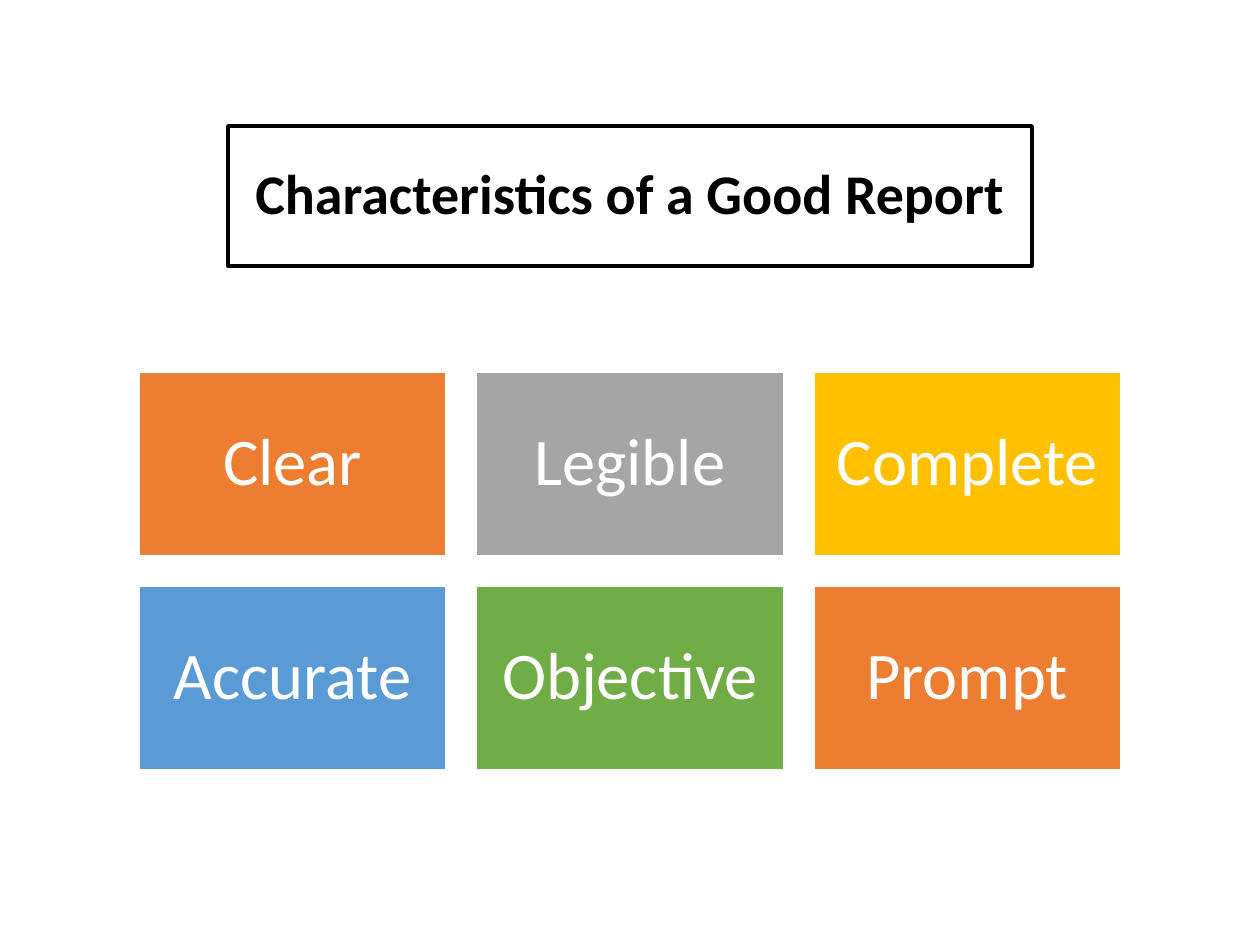
from dataclasses import dataclass

from lxml import etree
from pptx import Presentation
from pptx.dml.color import RGBColor
from pptx.enum.shapes import MSO_SHAPE
from pptx.enum.text import MSO_ANCHOR, MSO_AUTO_SIZE, PP_ALIGN
from pptx.oxml.ns import qn
from pptx.util import Pt

RECT = MSO_SHAPE.RECTANGLE
MIDDLE = MSO_ANCHOR.MIDDLE
CENTER = PP_ALIGN.CENTER
NO_FIT = MSO_AUTO_SIZE.NONE
PX = 914400 / 126


@dataclass(frozen=True)
class Theme:
    """Colours, font and type sizes of the deck."""
    font: str = "Calibri"
    ink: str = "000000"
    paper: str = "FFFFFF"
    orange: str = "ED7D31"
    grey: str = "A5A5A5"
    gold: str = "FFC000"
    blue: str = "5B9BD5"
    green: str = "70AD47"
    head: int = 32
    label: int = 38


THEME = Theme()
TRAITS = [
    ("Clear", THEME.orange), ("Legible", THEME.grey), ("Complete", THEME.gold),
    ("Accurate", THEME.blue), ("Objective", THEME.green), ("Prompt", THEME.orange),
]


def emu(px):
    """Turn px into EMU."""
    return round(px * PX)


def apply(item, values):
    """Set each attribute of item from a dict."""
    for name, value in values.items():
        setattr(item, name, value)


def paint(shape, fill, line, width):
    """Give a shape a solid fill and a line."""
    shape.fill.solid()
    shape.fill.fore_color.rgb = RGBColor.from_string(fill)
    shape.line.color.rgb = RGBColor.from_string(line)
    shape.line.width = Pt(width)


def write(shape, text, color, size, bold=False):
    """Write one centred paragraph in a shape."""
    frame = shape.text_frame
    frame.text = text
    para = frame.paragraphs[0]
    apply(frame, {"word_wrap": True, "vertical_anchor": MIDDLE, "auto_size": NO_FIT})
    apply(para, {"alignment": CENTER, "line_spacing": 0.9})
    font = para.runs[0].font
    apply(font, {"name": THEME.font, "size": Pt(size), "bold": bold})
    font.color.rgb = RGBColor.from_string(color)


def add_head(slide, box, text):
    """Place the framed title in its box."""
    title = slide.shapes.title
    apply(title, dict(zip(("left", "top", "width", "height"), map(emu, box))))
    paint(title, THEME.paper, THEME.ink, 2)
    tint = title.fill._xPr.find(qn("a:solidFill"))[0]
    etree.SubElement(tint, qn("a:alpha")).set("val", "10000")
    write(title, text, THEME.ink, THEME.head, True)


def add_grid(slide, box, traits, cols=3, gap=30, inset=20):
    """Fill the box with an even grid of coloured tiles."""
    left, top, width, height = box
    rows = -(-len(traits) // cols)
    wide = (width - gap * (cols - 1)) / cols
    high = (height - gap * (rows - 1)) / rows
    sides = ("margin_left", "margin_top", "margin_right", "margin_bottom")
    for index, (text, color) in enumerate(traits):
        row, col = divmod(index, cols)
        place = (left + col * (wide + gap), top + row * (high + gap), wide, high)
        tile = slide.shapes.add_shape(RECT, *map(emu, place))
        tile.shadow.inherit = False
        paint(tile, color, THEME.paper, 1)
        write(tile, text, THEME.paper, THEME.label)
        apply(tile.text_frame, dict.fromkeys(sides, emu(inset)))


def main():
    """Build and save the slide."""
    deck = Presentation()
    apply(deck, {"slide_width": emu(1260), "slide_height": emu(945)})
    slide = deck.slides.add_slide(deck.slide_layouts.get_by_name("Title Only"))
    add_head(slide, (228, 126, 804, 140), "Characteristics of a Good Report")
    add_grid(slide, (139, 372, 982, 398), TRAITS)
    deck.save("out.pptx")


if __name__ == "__main__":
    main()
